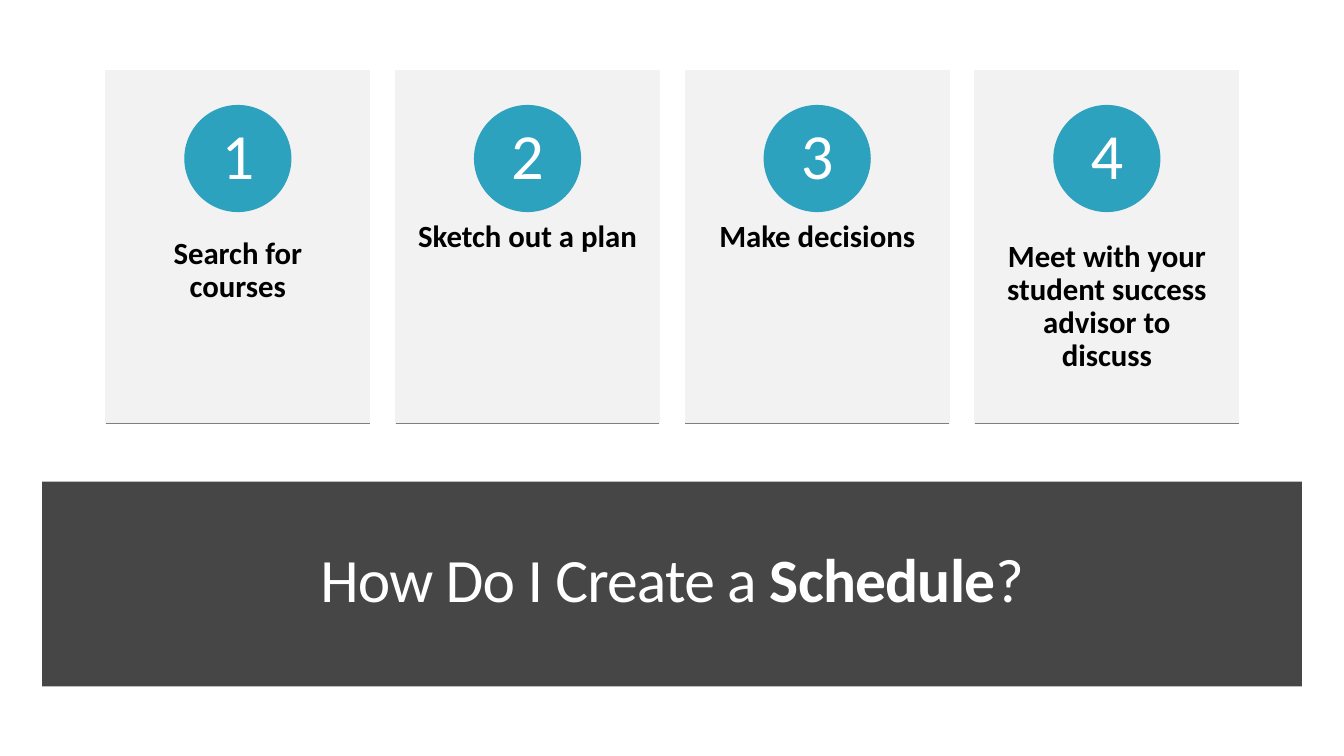
import pptx
import pptx.util
import pptx.dml.color
import pptx.enum.shapes
import pptx.enum.text
import pptx.oxml
from pptx.util import Cm

# Content
STEPS = [
    "Search for courses",
    "Sketch out a plan",
    "Make decisions",
    "Meet with your student success advisor to discuss",
]
TITLE = [("How Do I Create a ", False), ("Schedule", True), ("?", False)]

# Look
FONT = "Calibri"
WHITE, BLACK, CARD, BAND, TEAL, RULE = "FFFFFF", "000000", "F2F2F2", "464646", "2DA2BF", "7F7F7F"
LINE_WIDTH = 0.85
SHAPES = pptx.enum.shapes.MSO_SHAPE
ANCHORS = pptx.enum.text.MSO_ANCHOR

# Card grid, in centimetres
CARD_LEFT, CARD_TOP, CARD_WIDTH, CARD_HEIGHT = 2.67, 1.77, 6.65, 8.9
CARD_PITCH = 7.3
CIRCLE_SIZE, CIRCLE_TOP = 2.67, 2.66
CAPTION_TOP, CAPTION_HEIGHT = 5.15, 5.33


def color(hex_code):
    return pptx.dml.color.RGBColor.from_string(hex_code)


def add_block(page, kind, left, top, width, height, fill, outlined=True):
    block = page.shapes.add_shape(kind, Cm(left), Cm(top), Cm(width), Cm(height))
    block.shadow.inherit = False
    block.fill.solid()
    block.fill.fore_color.rgb = color(fill)
    if outlined:
        block.line.color.rgb = color(fill)
        block.line.width = pptx.util.Pt(LINE_WIDTH)
    else:
        block.line.fill.background()
    return block


def add_text(box, runs, size, fill, anchor, inset_x=0, inset_y=0, tracking=0, wrap=True):
    frame = box.text_frame
    frame.word_wrap = wrap
    frame.vertical_anchor = anchor
    frame.margin_left = frame.margin_right = Cm(inset_x)
    frame.margin_top = frame.margin_bottom = Cm(inset_y)
    para = frame.paragraphs[0]
    para.alignment = pptx.enum.text.PP_ALIGN.CENTER
    para.line_spacing = 0.9
    for words, bold in runs:
        span = para.add_run()
        span.text = words
        span.font.name = FONT
        span.font.size = pptx.util.Pt(size)
        span.font.bold = bold
        span.font.color.rgb = color(fill)
        if tracking:
            span.font._element.set("spc", str(round(tracking * 100)))


def add_rule(page, left, top, width):
    rule = page.shapes.add_connector(
        pptx.enum.shapes.MSO_CONNECTOR.STRAIGHT, Cm(left), Cm(top), Cm(left + width), Cm(top))
    rule.line.color.rgb = color(RULE)
    rule.line.width = pptx.util.Pt(LINE_WIDTH)
    rule._element.spPr.append(pptx.oxml.parse_xml(
        '<a:effectLst xmlns:a="http://schemas.openxmlformats.org/drawingml/2006/main"/>'))


def add_step(page, index, caption):
    left = CARD_LEFT + index * CARD_PITCH
    add_block(page, SHAPES.RECTANGLE, left, CARD_TOP, CARD_WIDTH, CARD_HEIGHT, CARD)

    box = page.shapes.add_textbox(Cm(left), Cm(CAPTION_TOP), Cm(CARD_WIDTH), Cm(CAPTION_HEIGHT))
    add_text(box, [(caption, True)], 22, BLACK, ANCHORS.TOP, 0.52, 0.91)

    circle_left = left + (CARD_WIDTH - CIRCLE_SIZE) / 2
    circle = add_block(page, SHAPES.OVAL, circle_left, CIRCLE_TOP, CIRCLE_SIZE, CIRCLE_SIZE, TEAL)
    add_text(circle, [(str(index + 1), False)], 46, WHITE, ANCHORS.MIDDLE, wrap=False)

    add_rule(page, left, CARD_TOP + CARD_HEIGHT, CARD_WIDTH)


def main():
    deck = pptx.Presentation()
    deck.slide_width, deck.slide_height = Cm(33.87), Cm(19.05)
    page = deck.slides.add_slide(deck.slide_layouts[6])

    # Title band
    add_block(page, SHAPES.RECTANGLE, 1.06, 12.14, 31.75, 5.16, BAND, outlined=False)
    title = page.shapes.add_textbox(Cm(1.55), Cm(12.78), Cm(30.78), Cm(3.78))
    add_text(title, TITLE, 44, WHITE, ANCHORS.MIDDLE, 0.25, 0.13, tracking=-0.6)

    # Numbered step cards
    for index, caption in enumerate(STEPS):
        add_step(page, index, caption)

    deck.save("out.pptx")


if __name__ == "__main__":
    main()
